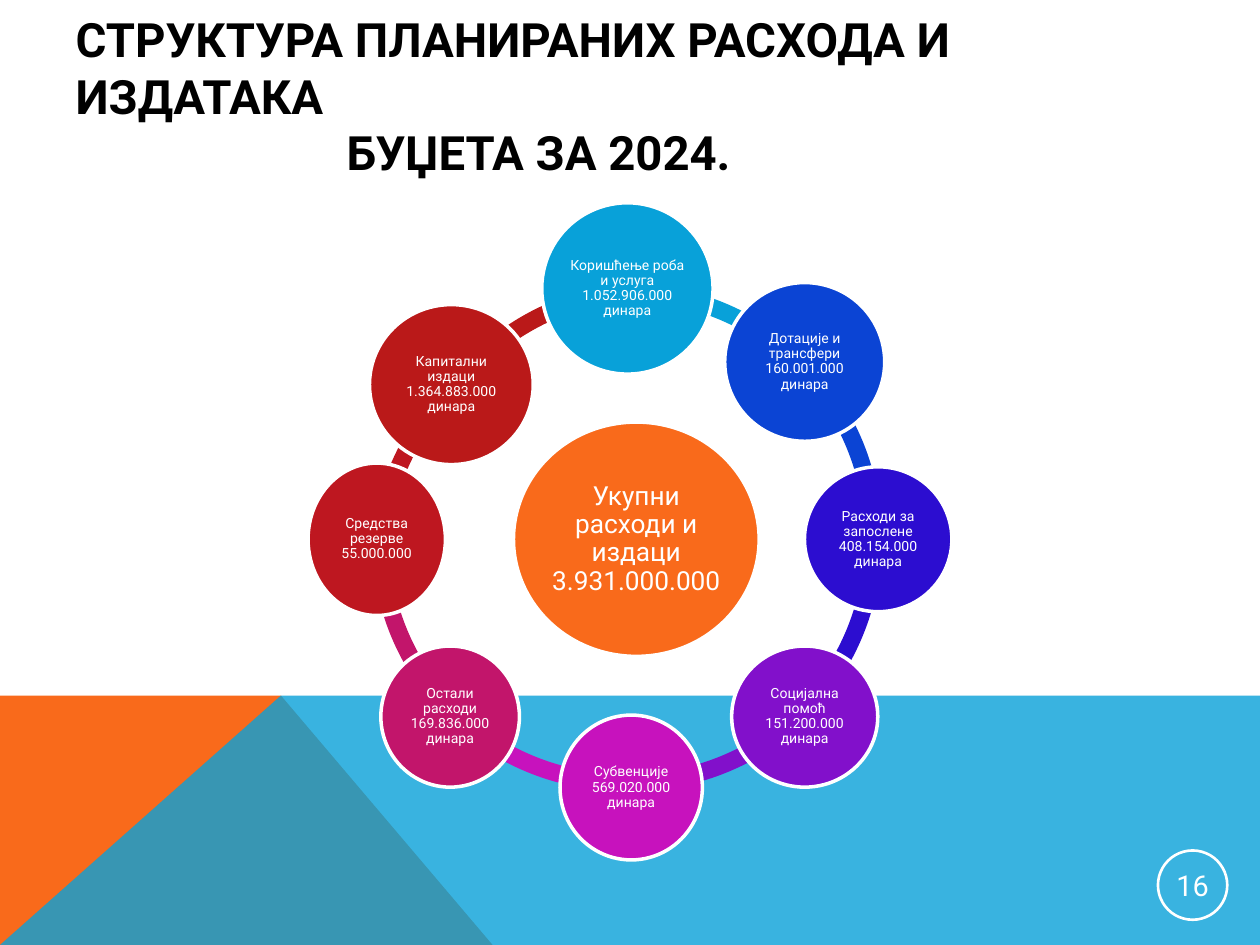
"""Build the slide on the structure of planned budget expenditure for 2024."""
from math import cos, radians, sin

from lxml.etree import SubElement
from pptx import Presentation
from pptx.dml.color import RGBColor
from pptx.enum.shapes import MSO_SHAPE as Shape
from pptx.enum.text import MSO_ANCHOR as Anchor, MSO_AUTO_SIZE as AutoSize, PP_ALIGN as Align
from pptx.oxml.ns import qn
from pptx.util import Inches, Pt

WIDTH, HEIGHT = 10, 7.5
FONT = "Roboto"
COLORS = {
    "black": "000000", "white": "FFFFFF", "orange": "F96A1B", "sky": "08A1D9",
    "blue": "0B44D4", "indigo": "2C0DD0", "violet": "8210CB", "magenta": "C712BD",
    "pink": "C2156B", "red": "BE1720", "brick": "BA1919",
}

TITLE = [("СТРУКТУРА ПЛАНИРАНИХ РАСХОДА И ИЗДАТАКА", 0), ("БУЏЕТА ЗА 2024.", 2.15)]
TOTAL = "Укупни расходи и издаци 3.931.000.000"
PAGE_NUMBER = "16"

RING_CENTER, RING_RADIUS = (4.98, 4.28), 1.99
ARC_SIZE, ARC_THICKNESS = 4.05, 0.034
ARC_HOME = (2.95, 2.25)

# (text, colour, size, nudge off the ring, arc corner, arc angles)
EXPENSES = [
    ("Коришћење роба и услуга 1.052.906.000 динара", "sky", (1.36, 1.36), (0, 0), ARC_HOME, (270, 315)),
    ("Дотације и трансфери 160.001.000 динара", "blue", (1.27, 1.26), (0, 0), ARC_HOME, (315, 0)),
    ("Расходи за запослене 408.154.000 динара", "indigo", (1.17, 1.15), (0, 0), ARC_HOME, (0, 45)),
    ("Социјална помоћ 151.200.000 динара", "violet", (1.16, 1.12), (0, 0), (2.98, 2.23), (45.93, 89.8)),
    ("Субвенције 569.020.000 динара", "magenta", (1.13, 1.15), (0.03, -0.02), (2.93, 2.23), (88.5, 134.1)),
    ("Остали расходи 169.836.000 динара", "pink", (1.1, 1.12), (0, 0), ARC_HOME, (135, 180)),
    ("Средства резерве 55.000.000", "red", (1.09, 1.21), (0, 0), (2.94, 2.45), (185.81, 225.94)),
    ("Капитални издаци 1.364.883.000 динара", "brick", (1.3, 1.27), (0.01, 0.18), (3.13, 2.24), (217.83, 264.88)),
]

BAND_TOP, PEAK = 5.52, 2.23
BANDS = [
    ([(0, HEIGHT), (0, BAND_TOP), (PEAK, BAND_TOP), (3.91, HEIGHT)], "orange", 100),
    ([(0, HEIGHT), (PEAK, BAND_TOP), (WIDTH, BAND_TOP), (WIDTH, HEIGHT)], "sky", 80),
]


def rgb(name):
    return RGBColor.from_string(COLORS[name])


def paint(shape, fill=None, line=None, line_width=0):
    shape.shadow.inherit = False
    if fill:
        shape.fill.solid()
        shape.fill.fore_color.rgb = rgb(fill)
    else:
        shape.fill.background()
    if line:
        shape.line.color.rgb = rgb(line)
        shape.line.width = Pt(line_width)
    else:
        shape.line.fill.background()


def style(para, size, color, align, bold=False):
    para.alignment = align
    font = para.font
    font.name, font.size, font.bold = FONT, Pt(size), bold
    font.color.rgb = rgb(color)


def add_band(page, points, color, opacity):
    start, *rest = [(Inches(x), Inches(y)) for x, y in points]
    builder = page.shapes.build_freeform(*start)
    builder.add_line_segments(rest, close=True)
    band = builder.convert_to_shape()
    paint(band, color)
    if opacity < 100:
        tint = band.fill._xPr.find(qn("a:solidFill"))[0]
        SubElement(tint, qn("a:alpha"), val=str(opacity * 1000))


def add_arc(page, corner, angles, color):
    arc = page.shapes.add_shape(Shape.BLOCK_ARC, *map(Inches, (*corner, ARC_SIZE, ARC_SIZE)))
    for index, angle in enumerate(angles):
        arc.adjustments[index] = angle * 0.6
    arc.adjustments[2] = ARC_THICKNESS
    paint(arc, color)


def add_circle(page, center, size, text, font_size, fill, line_width, spacing=0.9):
    corner = [middle - length / 2 for middle, length in zip(center, size)]
    circle = page.shapes.add_shape(Shape.OVAL, *map(Inches, (*corner, *size)))
    paint(circle, fill, "white", line_width)
    frame = circle.text_frame
    frame.word_wrap = True
    frame.vertical_anchor = Anchor.MIDDLE
    frame.margin_left = frame.margin_right = frame.margin_top = frame.margin_bottom = 0
    para = frame.paragraphs[0]
    para.text = text
    para.line_spacing = spacing
    style(para, font_size, "white", Align.CENTER)


def add_title(page):
    title = page.shapes.title
    title.left, title.top, title.width, title.height = map(Inches, (0.5, 0.29, 9, 0.93))
    frame = title.text_frame
    frame.auto_size = AutoSize.NONE
    frame.word_wrap = True
    frame.vertical_anchor = Anchor.MIDDLE
    frame.margin_right = Inches(0.4)
    frame.text = "\n".join(text for text, _ in TITLE)
    for para, (_, indent) in zip(frame.paragraphs, TITLE):
        style(para, 27, "black", Align.LEFT, bold=True)
        para.space_before = Pt(0)
        para._p.get_or_add_pPr().set("marL", str(Inches(indent)))


def main():
    deck = Presentation()
    deck.slide_width, deck.slide_height = Inches(WIDTH), Inches(HEIGHT)
    page = deck.slides.add_slide(deck.slide_layouts[5])
    for points, color, opacity in BANDS:
        add_band(page, points, color, opacity)
    add_title(page)
    add_circle(page, (9.465, 7.025), (0.55, 0.55), PAGE_NUMBER, 16.5, None, 1.5, 1)

    for _, color, _, _, corner, angles in reversed(EXPENSES):
        add_arc(page, corner, angles, color)
    add_circle(page, (5.05, 4.28), (1.95, 1.86), TOTAL, 15, "orange", 2)
    for index, (text, color, size, nudge, _, _) in enumerate(EXPENSES):
        angle = radians(360 / len(EXPENSES) * index - 90)
        center = [
            middle + RING_RADIUS * share + shift
            for middle, share, shift in zip(RING_CENTER, (cos(angle), sin(angle)), nudge)
        ]
        add_circle(page, center, size, text, 8, color, 2)
    deck.save("out.pptx")


if __name__ == "__main__":
    main()
